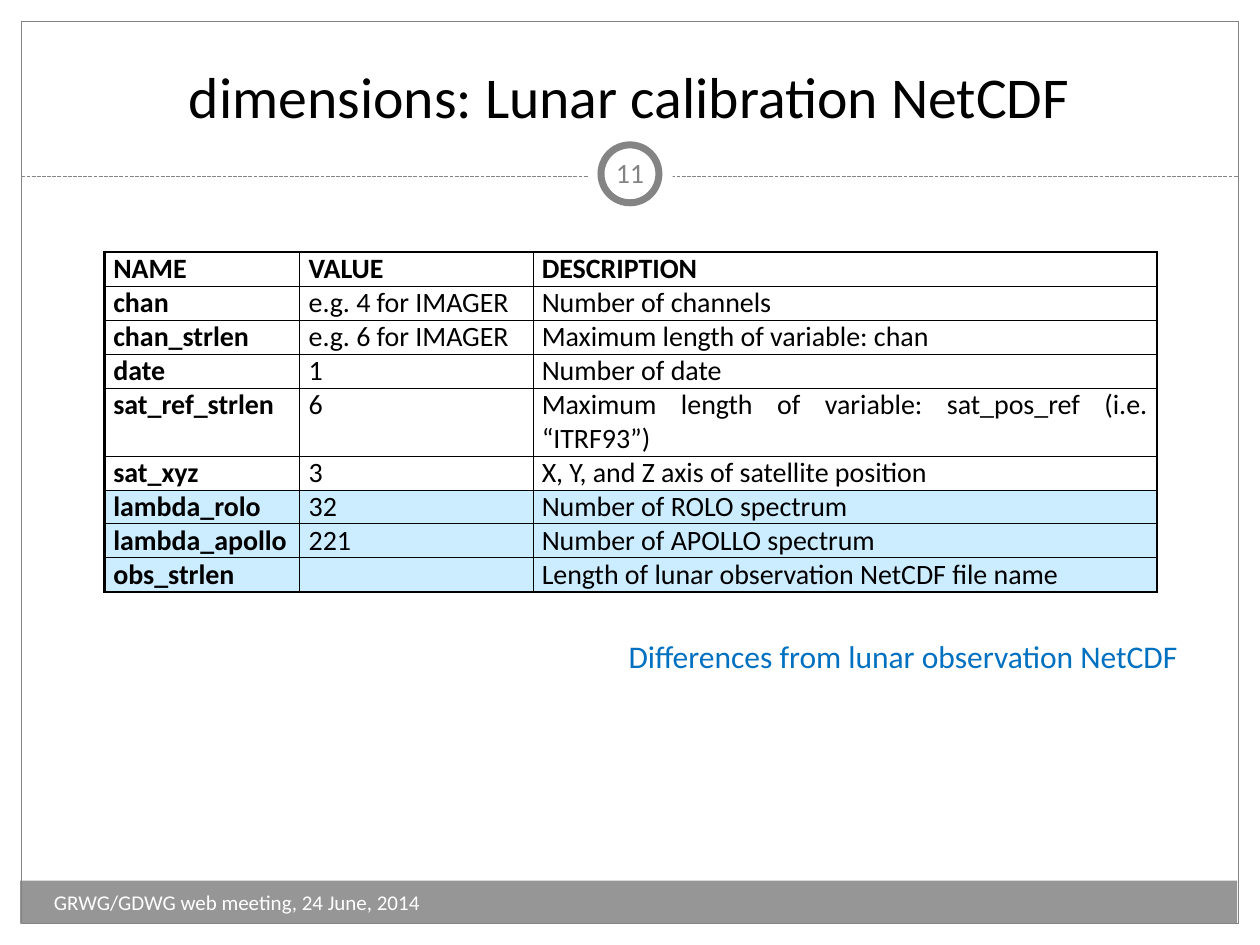
import dataclasses
import pptx
import pptx.dml.color
import pptx.enum.dml
import pptx.enum.shapes
import pptx.enum.text
import pptx.oxml
import pptx.oxml.ns
import pptx.util

Inches = pptx.util.Inches
Pt = pptx.util.Pt
Shape = pptx.enum.shapes.MSO_SHAPE
Align = pptx.enum.text.PP_ALIGN
Anchor = pptx.enum.text.MSO_ANCHOR


@dataclasses.dataclass(frozen=True)
class Theme:
    font: str = "Calibri"
    white: str = "FFFFFF"
    black: str = "000000"
    gray: str = "848484"
    band: str = "969696"
    blue: str = "0070C0"
    tint: str = "CCECFF"
    title: int = 33
    note: int = 18
    body: int = 16
    foot: int = 12
    thick: float = 1.5
    thin: float = 0.5


THEME = Theme()

HEAD = ("NAME", "VALUE", "DESCRIPTION")
ROWS = (
    ("chan", "e.g. 4 for IMAGER", "Number of channels"),
    ("chan_strlen", "e.g. 6 for IMAGER", "Maximum length of variable: chan"),
    ("date", "1", "Number of date"),
    ("sat_ref_strlen", "6", "Maximum length of variable: sat_pos_ref (i.e. “ITRF93”)"),
    ("sat_xyz", "3", "X, Y, and Z axis of satellite position"),
)
ADDED = (
    ("lambda_rolo", "32", "Number of ROLO spectrum"),
    ("lambda_apollo", "221", "Number of APOLLO spectrum"),
    ("obs_strlen", "", "Length of lunar observation NetCDF file name"),
)
WIDTHS = (1.55, 1.85, 4.95)
LINE = 0.27


def color(code):
    return pptx.dml.color.RGBColor.from_string(code)


def write(frame, text, size=THEME.body, ink=THEME.black, bold=False, align=Align.LEFT):
    para = frame.paragraphs[0]
    para.alignment = align
    if not text:
        para._p.get_or_add_endParaRPr().set("sz", str(size * 100))
        return
    run = para.add_run()
    run.text = text
    run.font.name = THEME.font
    run.font.size = Pt(size)
    run.font.bold = bold
    run.font.color.rgb = color(ink)


def add_text(slide, place, text, wrap=True, anchor=Anchor.TOP, inset=None, **style):
    frame = slide.shapes.add_textbox(*map(Inches, place)).text_frame
    frame.word_wrap = wrap
    frame.vertical_anchor = anchor
    if inset is not None:
        frame.margin_left = frame.margin_right = Inches(inset)
        frame.margin_top = frame.margin_bottom = Inches(inset)
    write(frame, text, **style)


def add_shape(slide, kind, place, fill=None, line=None, width=0.75):
    shape = slide.shapes.add_shape(kind, *map(Inches, place))
    shape.shadow.inherit = False
    if fill:
        shape.fill.solid()
        shape.fill.fore_color.rgb = color(fill)
    else:
        shape.fill.background()
    if line:
        shape.line.color.rgb = color(line)
        shape.line.width = Pt(width)
    else:
        shape.line.fill.background()


def add_rule(slide, left, right, top):
    rule = slide.shapes.add_connector(
        pptx.enum.shapes.MSO_CONNECTOR.STRAIGHT,
        Inches(left), Inches(top), Inches(right), Inches(top))
    rule.line.color.rgb = color(THEME.gray)
    rule.line.width = Pt(0.75)
    rule.line.dash_style = pptx.enum.dml.MSO_LINE.SQUARE_DOT
    rule._element.spPr.append(pptx.oxml.parse_xml(
        f'<a:effectLst {pptx.oxml.ns.nsdecls("a")}/>'))


def set_edge(cell, side, width):
    cell._tc.get_or_add_tcPr().append(pptx.oxml.parse_xml(
        f'<a:ln{side} {pptx.oxml.ns.nsdecls("a")} w="{int(Pt(width))}">'
        f'<a:solidFill><a:srgbClr val="{THEME.black}"/></a:solidFill></a:ln{side}>'))


def add_table(slide, left, top):
    rows = (HEAD,) + ROWS + ADDED
    last, end = len(rows) - 1, len(WIDTHS) - 1
    table = slide.shapes.add_table(
        len(rows), len(WIDTHS), Inches(left), Inches(top),
        Inches(sum(WIDTHS)), Inches(LINE * (len(rows) + 1))).table
    table.first_row = table.horz_banding = False
    for col, width in zip(table.columns, WIDTHS):
        col.width = Inches(width)
    for y, row in enumerate(rows):
        table.rows[y].height = Inches(LINE * (2 if row[0] == "sat_ref_strlen" else 1))
        for x, text in enumerate(row):
            cell = table.cell(y, x)
            cell.margin_left = cell.margin_right = Inches(0.07)
            cell.margin_top = cell.margin_bottom = 0
            outer = {"L": x == 0, "R": x == end, "T": y == 0, "B": y == last}
            for side, edge in outer.items():
                set_edge(cell, side, THEME.thick if edge else THEME.thin)
            if row in ADDED:
                cell.fill.solid()
                cell.fill.fore_color.rgb = color(THEME.tint)
            else:
                cell.fill.background()
            write(cell.text_frame, text, bold=x == 0 or y == 0, align=Align.JUSTIFY)


def add_frame(slide):
    for place in ((0, 0, 10, 1.52), (0, 0, 0.17, 7.5), (9.83, 0, 0.17, 7.5)):
        add_shape(slide, Shape.RECTANGLE, place, fill=THEME.white)
    add_shape(slide, Shape.RECTANGLE, (0.16, 6.99, 9.66, 0.34), fill=THEME.band)
    add_shape(slide, Shape.RECTANGLE, (0.17, 0.17, 9.66, 7.16), line=THEME.gray)
    add_rule(slide, 0.17, 9.83, 1.4)
    add_shape(slide, Shape.OVAL, (4.67, 1.05, 0.67, 0.67), fill=THEME.white)
    add_shape(slide, Shape.OVAL, (4.77, 1.15, 0.46, 0.46),
              fill=THEME.white, line=THEME.gray, width=4)


def main():
    deck = pptx.Presentation()
    deck.slide_width, deck.slide_height = Inches(10), Inches(7.5)
    slide = deck.slides.add_slide(deck.slide_layouts[6])
    add_frame(slide)
    add_text(slide, (0.33, 7.01, 3.92, 0.4), "GRWG/GDWG web meeting, 24 June, 2014",
             size=THEME.foot, ink=THEME.white)
    add_text(slide, (4.75, 1.13, 0.5, 0.48), "11", anchor=Anchor.MIDDLE, inset=0.05,
             ink=THEME.gray, align=Align.CENTER)
    add_text(slide, (0.33, 0.25, 9.33, 0.83), "dimensions: Lunar calibration NetCDF",
             anchor=Anchor.BOTTOM, size=THEME.title, align=Align.CENTER)
    add_table(slide, 0.83, 2)
    add_text(slide, (4.89, 5.01, 4.59, 0.4), "Differences from lunar observation NetCDF",
             wrap=False, size=THEME.note, ink=THEME.blue)
    deck.save("out.pptx")


if __name__ == "__main__":
    main()
